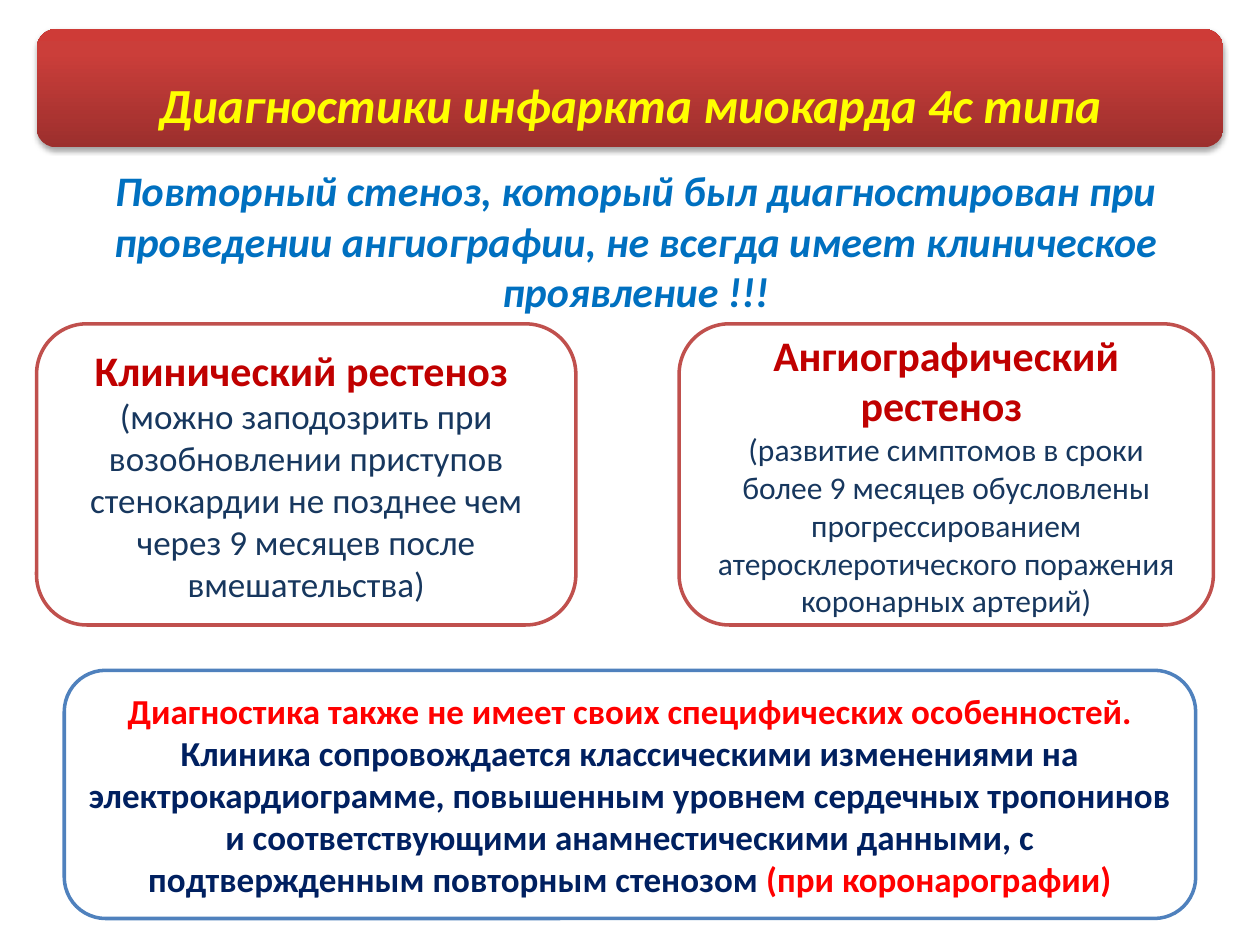
from lxml import etree
from pptx import Presentation
from pptx.dml.color import RGBColor
from pptx.enum.shapes import MSO_SHAPE
from pptx.enum.text import MSO_ANCHOR, PP_ALIGN
from pptx.oxml import parse_xml
from pptx.util import Inches, Pt

ROUND = MSO_SHAPE.ROUNDED_RECTANGLE
MIDDLE, TOP = MSO_ANCHOR.MIDDLE, MSO_ANCHOR.TOP
CENTER = PP_ALIGN.CENTER
UNIT = 0.1  # one grid step: 100 columns by 75 rows
COLS, ROWS = 100, 75
FONT = "Calibri"
NS = "http://schemas.openxmlformats.org/drawingml/2006/main"
HEX = {
    "white": "FFFFFF", "yellow": "FFFF00", "red": "FF0000", "blue": "0070C0",
    "navy": "002060", "slate": "17375E", "crimson": "C00000",
    "edge": "C0504D", "frame": "4F81BD", "shade": "000000",
    "dark": "9C2F2D", "mid": "CB3E3A", "light": "CE3B37",
}


def rgb(name):
    return RGBColor.from_string(HEX[name])


def place(box):
    return [Inches(n * UNIT) for n in box]


def write(para, text, size=20, color="navy", bold=False, italic=False):
    para.alignment = CENTER
    run = para.add_run()
    run.text = text
    font = run.font
    font.name, font.size = FONT, Pt(size)
    font.bold, font.italic = bold, italic
    font.color.rgb = rgb(color)


def panel(slide, box, line=None):
    shape = slide.shapes.add_shape(ROUND, *place(box))
    shape.shadow.inherit = False
    shape.fill.solid()
    shape.fill.fore_color.rgb = rgb("white")
    if line:
        shape.line.color.rgb = rgb(line)
        shape.line.width = Pt(2)
    else:
        shape.line.fill.background()
    frame = shape.text_frame
    frame.word_wrap = True
    frame.vertical_anchor = MIDDLE
    return shape


def shade(shape):
    """Red gradient rising from the bottom, with a soft shadow below."""
    shape.fill.gradient()
    shape.fill.gradient_angle = 90
    stops = shape.fill._fill._gradFill.find(f"{{{NS}}}gsLst")
    for stop in list(stops):
        stops.remove(stop)
    for share, name in ((0, "dark"), (80, "mid"), (100, "light")):
        stop = etree.SubElement(stops, f"{{{NS}}}gs", pos=str(share * 1000))
        etree.SubElement(stop, f"{{{NS}}}srgbClr", val=HEX[name])
    effect = shape._element.spPr.find(f"{{{NS}}}effectLst")
    effect.append(parse_xml(
        f'<a:outerShdw xmlns:a="{NS}" blurRad="{Pt(3.1)}" dist="{Pt(1.8)}" '
        f'dir="5400000" rotWithShape="0"><a:srgbClr val="{HEX["shade"]}">'
        '<a:alpha val="35000"/></a:srgbClr></a:outerShdw>'))


def banner(slide, box, text):
    shape = panel(slide, box)
    shade(shape)
    frame = shape.text_frame
    frame.margin_top = Inches(0.3)
    write(frame.paragraphs[0], text, size=28, color="yellow",
          bold=True, italic=True)


def lead(slide, box, text):
    frame = slide.shapes.add_textbox(*place(box)).text_frame
    frame.word_wrap = True
    frame.vertical_anchor = TOP
    write(frame.paragraphs[0], text, size=24, color="blue",
          bold=True, italic=True)


def card(slide, box, head, body, size):
    frame = panel(slide, box, line="edge").text_frame
    write(frame.paragraphs[0], head, size=24, color="crimson", bold=True)
    write(frame.add_paragraph(), body, size=size, color="slate")


def note(slide, box, parts):
    frame = panel(slide, box, line="frame").text_frame
    for text, color in parts:
        write(frame.paragraphs[0], text, color=color, bold=True)


def main():
    deck = Presentation()
    deck.slide_width = Inches(COLS * UNIT)
    deck.slide_height = Inches(ROWS * UNIT)
    slide = deck.slides.add_slide(deck.slide_layouts[6])

    # Title and main statement
    banner(slide, (2.9, 2.3, 94.2, 9.4),
           "Диагностики инфаркта миокарда 4c типа")
    lead(slide, (6, 12.6, 88.9, 13.1),
         "Повторный стеноз, который был диагностирован при проведении "
         "ангиографии, не всегда имеет клиническое проявление !!!")

    # Two kinds of restenosis
    top, high = 25.7, 23.9
    card(slide, (2.9, top, 42.8, high), "Клинический рестеноз ",
         "(можно заподозрить при возобновлении приступов стенокардии "
         "не позднее чем через 9 месяцев после вмешательства)", 20)
    card(slide, (53.9, top, 42.4, high), "Ангиографический рестеноз ",
         "(развитие симптомов в сроки более 9 месяцев обусловлены "
         "прогрессированием атеросклеротического поражения "
         "коронарных артерий)", 18)

    # Diagnosis summary
    note(slide, (5.1, 53.2, 89.8, 19.7), (
        ("Диагностика также не имеет своих специфических особенностей. ",
         "red"),
        ("Клиника сопровождается классическими изменениями на "
         "электрокардиограмме, повышенным уровнем сердечных тропонинов и "
         "соответствующими анамнестическими данными, с подтвержденным "
         "повторным стенозом ", "navy"),
        ("(при коронарографии)", "red")))

    deck.save("out.pptx")


if __name__ == "__main__":
    main()
